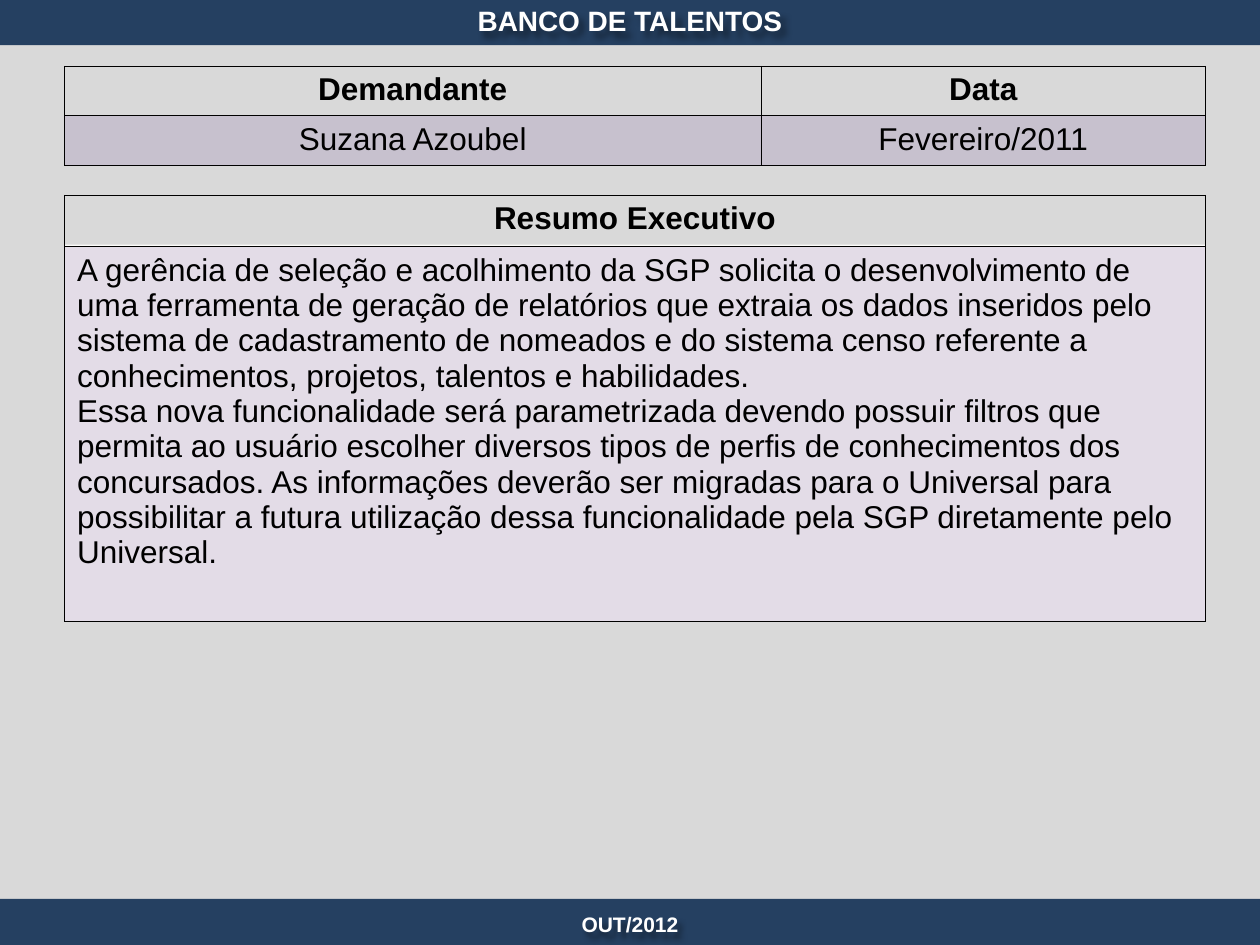
import pptx
import pptx.util
import pptx.dml.color
import pptx.enum.shapes
import pptx.enum.text
import pptx.oxml
import pptx.oxml.ns
from lxml import etree

Cm = pptx.util.Cm
Pt = pptx.util.Pt
RGBColor = pptx.dml.color.RGBColor
CENTER = pptx.enum.text.PP_ALIGN.CENTER
LEFT = pptx.enum.text.PP_ALIGN.LEFT
MIDDLE = pptx.enum.text.MSO_ANCHOR.MIDDLE
qn = pptx.oxml.ns.qn

NAVY = RGBColor(0x25, 0x40, 0x61)
GRAY = RGBColor(0xD9, 0xD9, 0xD9)
CREAM = RGBColor(0xFC, 0xFB, 0xF9)
PURPLE = RGBColor(0x80, 0x64, 0xA2)
BLACK = RGBColor(0, 0, 0)
WHITE = RGBColor(0xFF, 0xFF, 0xFF)

FONT = "Arial"
WIDTH, HEIGHT = 25.4, 19.05
BAR_HEIGHT = 0.93
TABLE_LEFT, TABLE_WIDTH = 1.3, 23.0

SUMMARY = [
    "A gerência de seleção e acolhimento da SGP solicita o desenvolvimento de uma "
    "ferramenta de geração de relatórios que extraia os dados inseridos pelo sistema de "
    "cadastramento de nomeados e do sistema censo referente a conhecimentos, projetos, "
    "talentos e habilidades.",
    "Essa nova funcionalidade será parametrizada devendo possuir filtros que permita ao "
    "usuário escolher diversos tipos de perfis de conhecimentos dos concursados. As "
    "informações deverão ser migradas para o Universal para possibilitar a futura "
    "utilização dessa funcionalidade pela SGP diretamente pelo Universal.",
]


def write(frame, paragraphs, size, color, bold, align):
    frame.word_wrap = True
    frame.text = "\n".join(paragraphs)
    for paragraph in frame.paragraphs:
        paragraph.alignment = align
        paragraph.space_before = Pt(0)
        paragraph.font.name = FONT
        paragraph.font.size = Pt(size)
        paragraph.font.bold = bold
        paragraph.font.color.rgb = color


def add_panel(slide, left, top, width, height, color):
    panel = slide.shapes.add_shape(
        pptx.enum.shapes.MSO_SHAPE.RECTANGLE, Cm(left), Cm(top), Cm(width), Cm(height))
    panel.shadow.inherit = False
    panel.fill.solid()
    panel.fill.fore_color.rgb = color
    panel.line.fill.background()


def add_text_shadow(shape):
    """Give the text of an unfilled shape a soft shadow."""
    shape.fill.background()
    shape.shadow.inherit = False
    effects = shape.element.spPr.find(qn("a:effectLst"))
    shadow = etree.SubElement(effects, qn("a:outerShdw"), blurRad="38100",
                              dist="38100", dir="2700000", algn="tl")
    black = etree.SubElement(shadow, qn("a:srgbClr"), val=str(BLACK))
    etree.SubElement(black, qn("a:alpha"), val="43000")


def place_bar_text(shape, text, left, top, width, height, size):
    shape.left, shape.top, shape.width, shape.height = map(Cm, (left, top, width, height))
    write(shape.text_frame, [text], size, WHITE, True, CENTER)
    shape.text_frame.vertical_anchor = MIDDLE
    shape.text_frame.auto_size = pptx.enum.text.MSO_AUTO_SIZE.NONE
    add_text_shadow(shape)


def add_borders(cell):
    properties = cell._tc.get_or_add_tcPr()
    for side in ("lnL", "lnR", "lnT", "lnB"):
        line = etree.SubElement(properties, qn(f"a:{side}"), w=str(Pt(0.25)))
        fill = etree.SubElement(line, qn("a:solidFill"))
        etree.SubElement(fill, qn("a:srgbClr"), val=str(BLACK))


def fill_cell(cell, paragraphs, is_header, align):
    add_borders(cell)
    write(cell.text_frame, paragraphs, 18, BLACK, is_header, align)
    if is_header:
        cell.fill.background()
        return
    cell.fill.solid()
    cell.fill.fore_color.rgb = PURPLE
    tint = cell._tc.tcPr.find(qn("a:solidFill")).find(qn("a:srgbClr"))
    etree.SubElement(tint, qn("a:alpha"), val="20000")


def add_table(slide, left, top, column_widths, row_heights, headers, bodies, body_align):
    """Table with one header row and one tinted row; bodies are paragraph lists."""
    table = slide.shapes.add_table(
        2, len(headers), Cm(left), Cm(top),
        Cm(sum(column_widths)), Cm(sum(row_heights))).table
    table.horz_banding = False
    table.first_row = False
    # Plain style without fills or grid
    table._tbl.tblPr.find(qn("a:tableStyleId")).text = "{2D5ABB26-0587-4C30-8999-92F81FD0307C}"
    for row, height in zip(table.rows, row_heights):
        row.height = Cm(height)
    for index, width in enumerate(column_widths):
        table.columns[index].width = Cm(width)
        fill_cell(table.cell(0, index), [headers[index]], True, CENTER)
        fill_cell(table.cell(1, index), bodies[index], False, body_align)


def add_frame(slide, left, top, width, height):
    """Gray page with a title bar above and a dated bar below."""
    bar_bottom = top + height - BAR_HEIGHT
    add_panel(slide, left, top + 0.91, width, 17.4, GRAY)
    add_panel(slide, left, bar_bottom, width, BAR_HEIGHT, NAVY)
    add_panel(slide, left, top - 0.02, width, BAR_HEIGHT, NAVY)
    date = slide.shapes.add_textbox(0, 0, 0, 0)
    place_bar_text(date, "OUT/2012", left, bar_bottom + 0.02, width, 1, 12)
    title = slide.shapes.title
    slide.shapes._spTree.append(title.element)  # in front of its bar
    place_bar_text(title, "BANCO DE TALENTOS", left, top - 0.28, width, 1.4, 16)


def main():
    presentation = pptx.Presentation()
    presentation.slide_width, presentation.slide_height = Cm(WIDTH), Cm(HEIGHT)
    slide = presentation.slides.add_slide(presentation.slide_layouts[5])
    add_frame(slide, 0, 0, WIDTH, HEIGHT)

    # Requester and date
    add_table(slide, TABLE_LEFT, 1.33, [14.04, 8.96], [1, 1],
              ["Demandante", "Data"], [["Suzana Azoubel"], ["Fevereiro/2011"]], CENTER)

    # Executive summary on its light panel
    add_panel(slide, TABLE_LEFT, 4.93, TABLE_WIDTH, 7.6, CREAM)
    add_table(slide, TABLE_LEFT, 3.93, [TABLE_WIDTH], [1.04, 7.56],
              ["Resumo Executivo"], [SUMMARY], LEFT)

    presentation.save("out.pptx")


if __name__ == "__main__":
    main()
